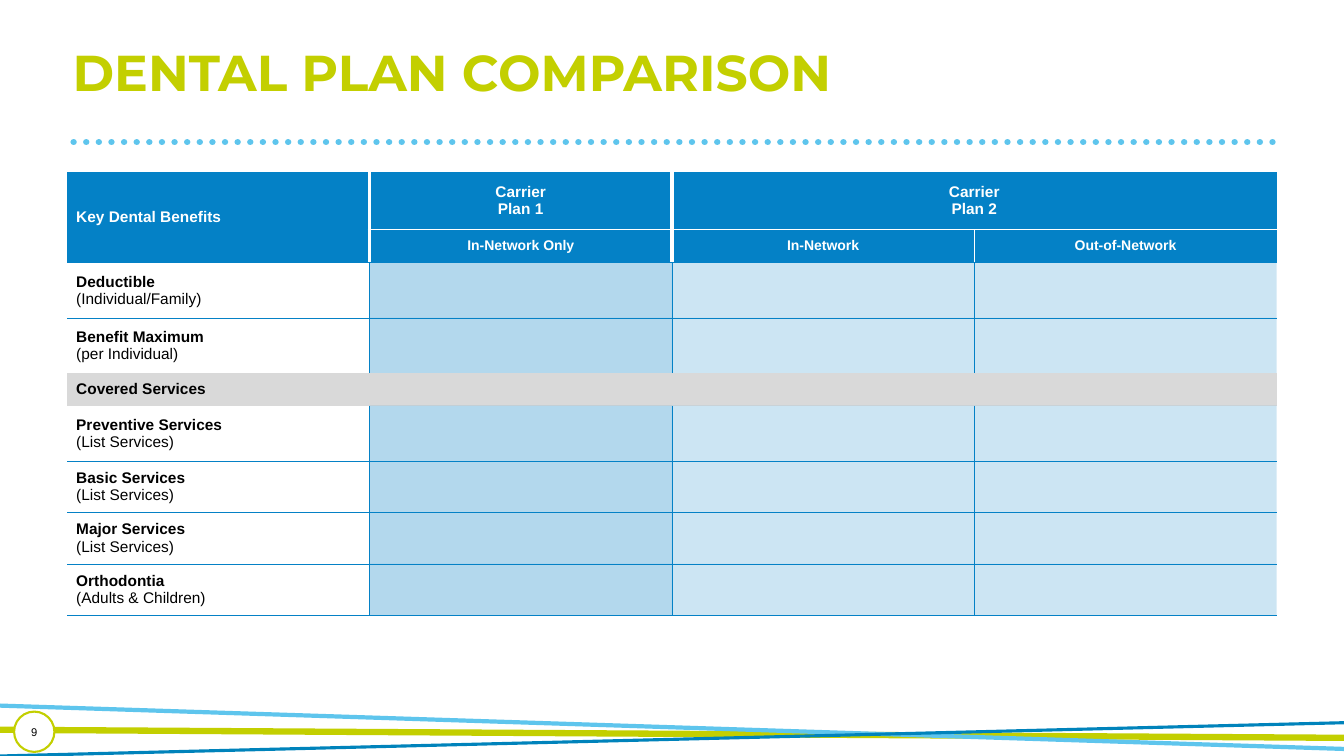
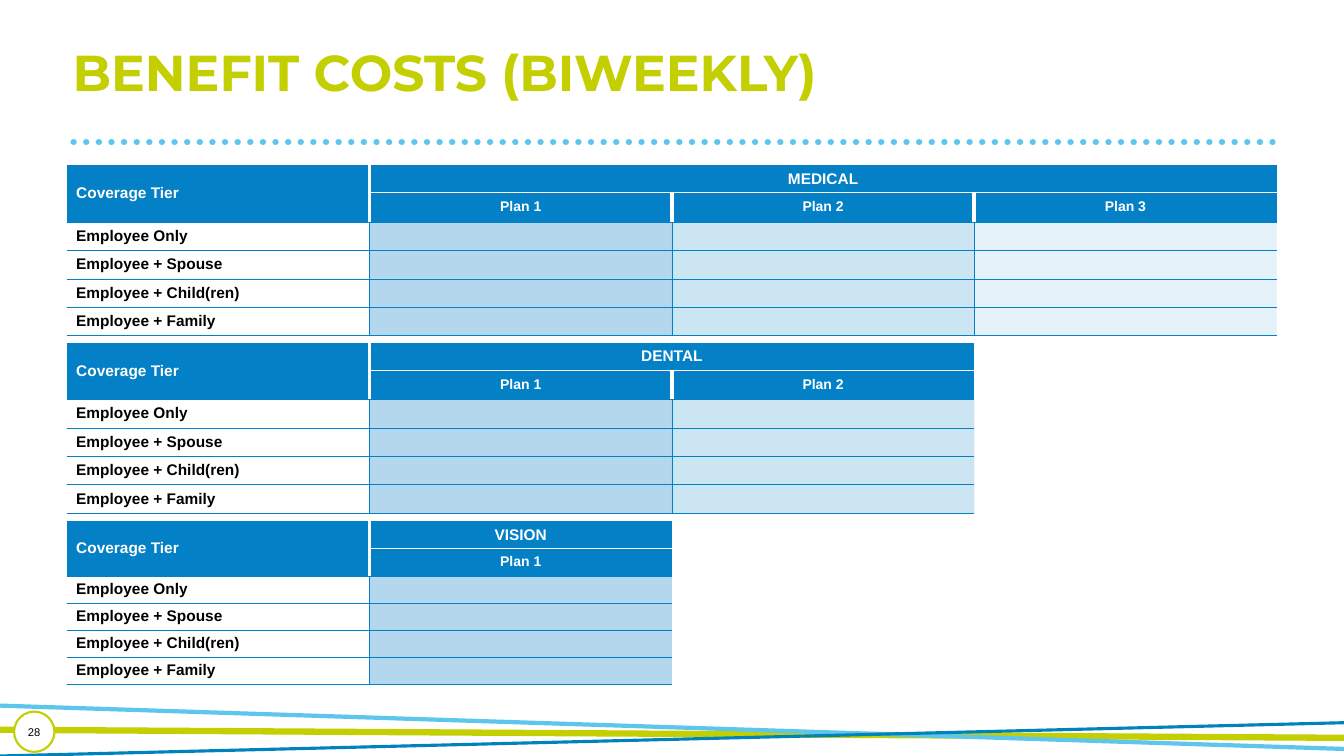
from lxml import etree
from pptx import Presentation
from pptx.dml.color import RGBColor
from pptx.enum.dml import MSO_LINE
from pptx.enum.shapes import MSO_CONNECTOR, MSO_SHAPE
from pptx.enum.text import MSO_ANCHOR, PP_ALIGN
from pptx.oxml.ns import qn
from pptx.util import Inches, Pt

LEFT, CENTER = PP_ALIGN.LEFT, PP_ALIGN.CENTER
TOP, MIDDLE = MSO_ANCHOR.TOP, MSO_ANCHOR.MIDDLE
STRAIGHT, OVAL = MSO_CONNECTOR.STRAIGHT, MSO_SHAPE.OVAL
ROUND_DOT = MSO_LINE.ROUND_DOT

WIDTH, HEIGHT = 13.333, 7.5
GRID_COLS, GRID_ROWS = 40, 30
LIME, SKY, DEEP, BLUE = "C3CF00", "5EC5ED", "0083BB", "0481C6"
WHITE, BLACK, GREY = "FFFFFF", "000000", "D9D9D9"
PLAIN_TABLE = "{2D5ABB26-0587-4C30-8999-92F81FD0307C}"
HEADER_ROWS = 2
HAIR, THICK = 0.25, 3


def rgb(color):
    return RGBColor.from_string(color)


def gx(cols):
    return Inches(cols * WIDTH / GRID_COLS)


def gy(rows):
    return Inches(rows * HEIGHT / GRID_ROWS)


def write(tf, text, size=11, color=BLACK, font="Arial", align=LEFT,
          bold=True, rest_bold=True, spacing=None):
    """Fill a text frame, one paragraph per line; rest_bold is for later lines."""
    for i, line in enumerate(text.split("\n")):
        p = tf.paragraphs[0] if i == 0 else tf.add_paragraph()
        p.alignment = align
        p.line_spacing = spacing
        if not line:
            p._p.get_or_add_endParaRPr().set("sz", str(size * 100))
            continue
        r = p.add_run()
        r.text = line
        r.font.name, r.font.size = font, Pt(size)
        r.font.bold = bold if i == 0 else rest_bold
        r.font.color.rgb = rgb(color)


def fill(obj, color, alpha=100):
    obj.fill.solid()
    obj.fill.fore_color.rgb = rgb(color)
    if alpha < 100:
        for clr in obj._tc.tcPr.iter(qn("a:srgbClr")):
            etree.SubElement(clr, qn("a:alpha"), val=str(alpha * 1000))


def set_borders(cell, edges):
    """Take (colour, points) or None for left, right, top and bottom."""
    tcPr = cell._tc.get_or_add_tcPr()
    for i, (side, edge) in enumerate(zip("LRTB", edges)):
        ln = etree.Element(qn("a:ln" + side))
        if edge:
            color, width = edge
            ln.set("w", str(Pt(width)))
            solid = etree.SubElement(ln, qn("a:solidFill"))
            etree.SubElement(solid, qn("a:srgbClr"), val=color)
        else:
            etree.SubElement(ln, qn("a:noFill"))
        tcPr.insert(i, ln)


class Deck:
    def __init__(self):
        self.prs = Presentation()
        self.prs.slide_width, self.prs.slide_height = Inches(WIDTH), Inches(HEIGHT)
        self.s = None

    def slide(self, title, number):
        self.s = self.prs.slides.add_slide(self.prs.slide_layouts[5])
        self.line((2.19, 5.64), (37.98, 5.64), SKY, 4.5, dotted=True)
        self.line((0, 28.96), (GRID_COLS, 29.28), LIME, 4.5)
        self.line((GRID_COLS, 29.72), (0, 28), SKY, 3)
        self.line((0, 30), (GRID_COLS, 28.68), DEEP, 2.25)
        self.title(title)
        self.page_number(number)

    def title(self, text):
        sp = self.s.shapes.title
        sp.left, sp.top, sp.width, sp.height = gx(1.86), gy(1.72), gx(36.09), gy(3.16)
        sp.text_frame.vertical_anchor = TOP
        write(sp.text_frame, text, size=36, color=LIME, font="Montserrat", spacing=0.9)

    def line(self, start, end, color, width, dotted=False):
        c = self.s.shapes.add_connector(
            STRAIGHT, gx(start[0]), gy(start[1]), gx(end[0]), gy(end[1]))
        c.line.color.rgb, c.line.width = rgb(color), Pt(width)
        spPr = c._element.spPr
        if dotted:
            c.line.dash_style = ROUND_DOT
            spPr.find(qn("a:ln")).set("cap", "rnd")
        etree.SubElement(spPr, qn("a:effectLst"))

    def page_number(self, number):
        sp = self.s.shapes.add_shape(OVAL, gx(0.42), gy(28.24), gx(1.2), gy(1.6))
        sp.shadow.inherit = False
        fill(sp, WHITE)
        sp.line.color.rgb, sp.line.width = rgb(LIME), Pt(1.5)
        tf = sp.text_frame
        tf.margin_left = tf.margin_right = tf.margin_top = tf.margin_bottom = 0
        tf.vertical_anchor = MIDDLE
        write(tf, str(number), size=8, align=CENTER, bold=False)

    def table(self, top, corner, groups, labels, heights, tints, split=THICK, section=None):
        """Draw a benefits table.

        groups pairs each heading with its plans, tints gives the opacity of
        each plan column, split is the rule between plans of one group, and
        section is the label of a full-width band.
        """
        plans = [plan for _, names in groups for plan in names]
        n_rows, n_cols = HEADER_ROWS + len(labels), 1 + len(plans)
        starts, col = {}, 1
        for heading, names in groups:
            starts[col] = (heading, len(names))
            col += len(names)
        band = HEADER_ROWS + labels.index(section) if section else None

        frame = self.s.shapes.add_table(
            n_rows, n_cols, gx(2), gy(top), gx(9 * n_cols), gy(sum(heights)))
        tbl = frame.table
        tbl.first_row = tbl.horz_banding = False
        tbl._tbl.tblPr.find(qn("a:tableStyleId")).text = PLAIN_TABLE
        for column in tbl.columns:
            column.width = gx(9)
        for row, height in zip(tbl.rows, heights):
            row.height = gy(height)

        def vertical(r, c):
            """Rule on the left of column c."""
            if c in (0, n_cols) or r == band:
                return None
            if r >= HEADER_ROWS:
                return BLUE, HAIR
            if c == 1 or c in starts:
                return WHITE, THICK
            return (WHITE, split) if r == 1 else None

        def horizontal(r, c):
            """Rule above row r."""
            if r == 0 or (band is not None and r in (band, band + 1)):
                return None
            if r == 1:
                return (WHITE, HAIR) if c else None
            return BLUE, HAIR

        for r in range(n_rows):
            for c in range(n_cols):
                cell = tbl.cell(r, c)
                header = r < HEADER_ROWS
                text, alpha, color = "", 100, BLUE
                if header:
                    if c == 0:
                        text = "" if r else corner
                    else:
                        text = plans[c - 1] if r else starts.get(c, ("",))[0]
                elif c == 0:
                    text, color = labels[r - HEADER_ROWS], WHITE
                else:
                    alpha = tints[c - 1]
                if r == band:
                    color, alpha = GREY, 100
                cell.margin_left = cell.margin_right = Inches(0.09)
                cell.margin_top = cell.margin_bottom = Inches(0.05 if header else 0.04)
                cell.vertical_anchor = MIDDLE
                write(cell.text_frame, text, size=10 if r == 1 else 11,
                      color=WHITE if header else BLACK,
                      align=CENTER if c else LEFT, rest_bold=header)
                fill(cell, color, alpha)
                set_borders(cell, (vertical(r, c), vertical(r, c + 1),
                                   horizontal(r, c), horizontal(r + 1, c)))

        tbl.cell(0, 0).merge(tbl.cell(1, 0))
        for c, (_, span) in starts.items():
            if span > 1:
                tbl.cell(0, c).merge(tbl.cell(0, c + span - 1))
        if section:
            tbl.cell(band, 0).merge(tbl.cell(band, n_cols - 1))


def main():
    deck = Deck()

    deck.slide("DENTAL PLAN COMPARISON", 9)
    services = ["Deductible\n(Individual/Family)", "Benefit Maximum\n(per Individual)",
                "Covered Services", "Preventive Services\n(List Services)",
                "Basic Services\n(List Services)", "Major Services\n(List Services)",
                "Orthodontia\n(Adults & Children)"]
    deck.table(6.82, "Key Dental Benefits",
               [("Carrier\nPlan 1", ["In-Network Only"]),
                ("Carrier\nPlan 2", ["In-Network", "Out-of-Network"])],
               services, [2.28, 1.32, 2.2, 2.2, 1.28, 2.2] + [2.04] * 3,
               [30, 20, 20], split=HAIR, section="Covered Services")

    deck.slide("BENEFIT COSTS (BIWEEKLY)", 28)
    tiers = ["Employee Only", "Employee + Spouse", "Employee + Child(ren)",
             "Employee + Family"]
    roomy = [1.08, 1.16] + [1.13] * 4
    tight = [1.08, 1.08] + [1.01] * 4
    for top, coverage, n_plans, heights in [
            (6.56, "MEDICAL", 3, roomy), (13.6, "DENTAL", 2, roomy),
            (20.68, "VISION", 1, tight)]:
        plans = [f"Plan {i + 1}" for i in range(n_plans)]
        deck.table(top, "Coverage Tier", [(coverage, plans)], tiers, heights, [30, 20, 10])

    deck.prs.save("out.pptx")


if __name__ == "__main__":
    main()
